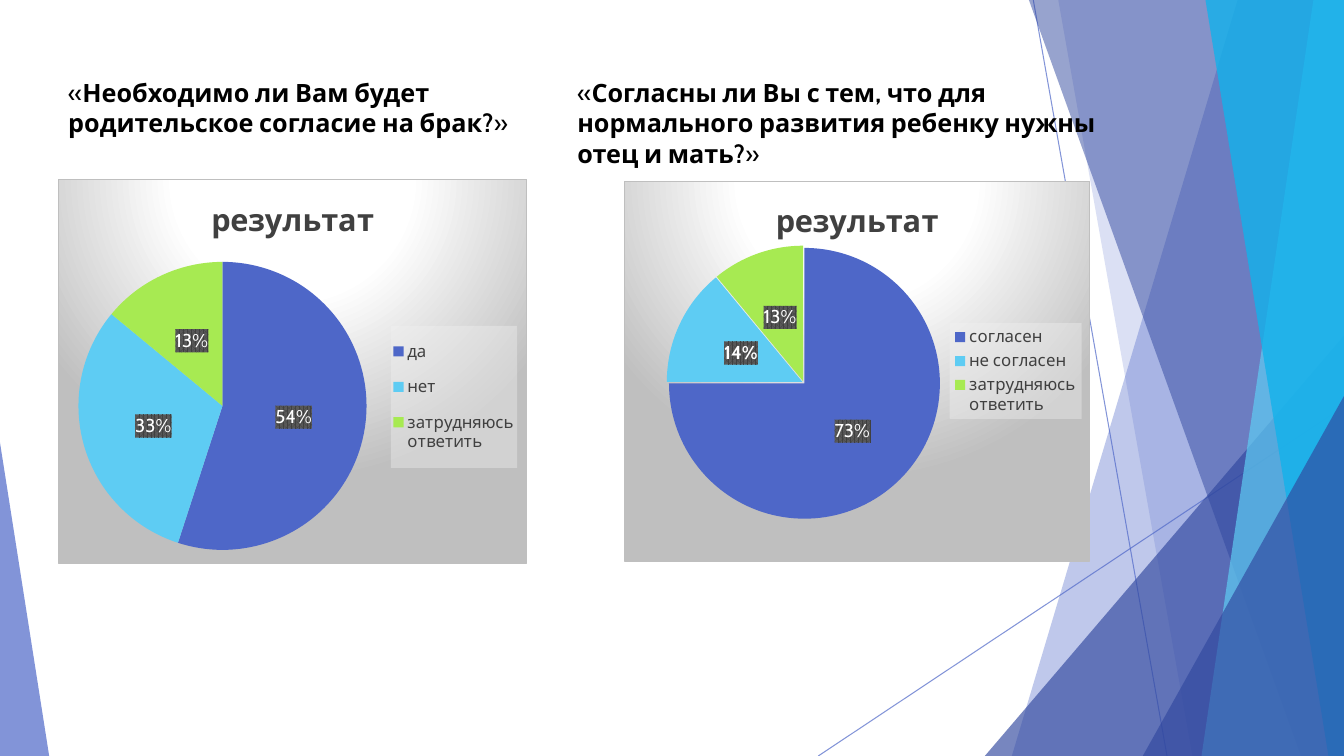
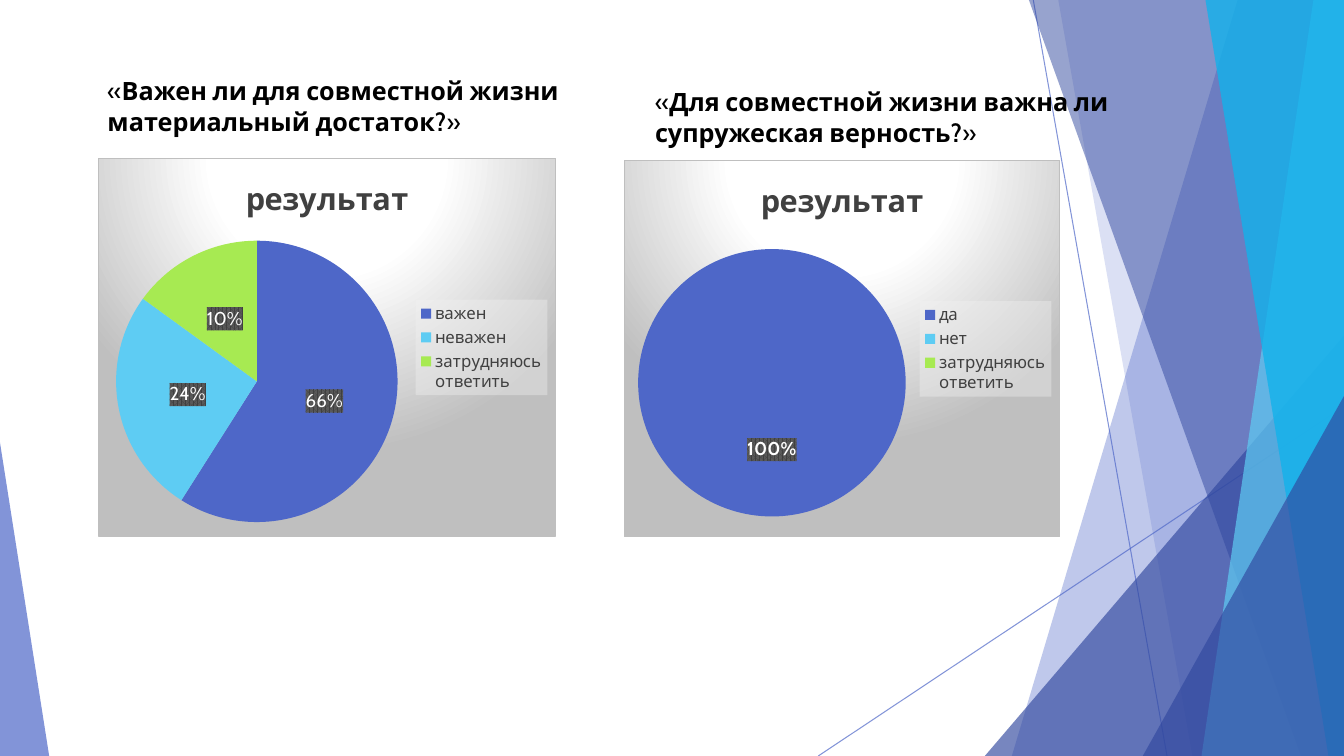
from dataclasses import dataclass

from pptx import Presentation
from pptx.chart.chart import Chart
from pptx.chart.data import CategoryChartData
from pptx.dml.color import RGBColor
from pptx.enum.chart import XL_CHART_TYPE, XL_LABEL_POSITION, XL_LEGEND_POSITION
from pptx.enum.shapes import MSO_CONNECTOR, MSO_SHAPE
from pptx.enum.text import MSO_AUTO_SIZE
from pptx.oxml import parse_xml
from pptx.oxml.ns import nsdecls, qn
from pptx.slide import Slide, SlideLayout
from pptx.text.text import Font
from pptx.util import Cm, Pt

PIE = XL_CHART_TYPE.PIE
LABEL_CENTER = XL_LABEL_POSITION.CENTER
LEGEND_RIGHT = XL_LEGEND_POSITION.RIGHT
STRAIGHT = MSO_CONNECTOR.STRAIGHT
TRIANGLE = MSO_SHAPE.ISOSCELES_TRIANGLE
GROW = MSO_AUTO_SIZE.SHAPE_TO_FIT_TEXT

COLORS = {
    "indigo": "4E67C8",
    "navy": "31489F",
    "sky": "5ECCF3",
    "azure": "12B2EB",
    "lime": "A7EA52",
    "black": "000000",
    "white": "FFFFFF",
    "silver": "BFBFBF",
    "mist": "F2F2F2",
    "charcoal": "404040",
    "slate": "595959",
}
ANSWER_COLORS = ("indigo", "sky", "lime")
FONT = "Cabin"
RESULT = "результат"
UNDECIDED = "затрудняюсь ответить"
WIDTH, HEIGHT = 33.87, 19.05

Box = tuple[float, float, float, float]


@dataclass(frozen=True)
class Ray:
    start: tuple[float, float]
    end: tuple[float, float]


@dataclass(frozen=True)
class Band:
    top_x: float
    bottom_x: float
    color: str
    opacity: int


@dataclass(frozen=True)
class Corner:
    width: float
    height: float
    color: str
    opacity: int
    on_right: bool = True


@dataclass(frozen=True)
class Poll:
    question: str
    question_box: Box
    chart_box: Box
    answers: tuple[str, str, str]
    votes: tuple[int, int, int]
    shares: dict[int, str]
    explosion: int = 0
    plot_area: Box | None = None
    legend_area: Box | None = None


BACKDROP = (
    Ray((26.04, 0), (29.41, HEIGHT)),
    Ray((WIDTH, 10.24), (20.62, HEIGHT)),
    Band(31.19, 25.5, "indigo", 36),
    Band(26.67, 30.05, "indigo", 20),
    Corner(9.05, 10.59, "navy", 66),
    Band(25.93, 32.79, "navy", 50),
    Band(33.1, 30.28, "sky", 70),
    Band(30.38, 33.48, "azure", 80),
    Corner(5.07, 9.07, "navy", 66),
    Corner(1.24, 7.9, "indigo", 70, on_right=False),
)

SLIDES = (
    (
        Poll(
            "Необходимо ли Вам будет родительское согласие на брак?",
            (1.47, 1.83, 12.45, 1.8),
            (1.47, 4.52, 11.81, 9.7),
            ("да", "нет", UNDECIDED),
            (55, 31, 14),
            {0: "54%", 1: "33%", 2: "13%"},
            legend_area=(0.71, 0.38, 0.27, 0.37),
        ),
        Poll(
            "Согласны ли Вы с тем, что для нормального развития ребенку нужны отец и мать?",
            (14.3, 1.83, 13.87, 2.57),
            (15.72, 4.55, 11.76, 9.6),
            ("согласен", "не согласен", UNDECIDED),
            (75, 14, 11),
            {0: "73%", 2: "13%"},
            explosion=1,
            plot_area=(0.07, 0.17, 0.63, 0.72),
        ),
    ),
    (
        Poll(
            "Важен ли для совместной жизни материальный достаток?",
            (2.46, 1.78, 13.26, 1.8),
            (2.46, 3.99, 11.56, 9.53),
            ("важен", "неважен", UNDECIDED),
            (59, 26, 15),
            {0: "66%", 1: "24%", 2: "10%"},
        ),
        Poll(
            "Для совместной жизни важна ли супружеская верность?",
            (16.26, 2.06, 11.94, 1.8),
            (15.72, 4.04, 11, 9.5),
            ("да", "нет", UNDECIDED),
            (100, 0, 0),
            {},
        ),
    ),
)


def rgb(name: str) -> RGBColor:
    return RGBColor.from_string(COLORS[name])


def set_font(font: Font, size: float, color: str, bold: bool) -> None:
    font.name, font.size, font.bold = FONT, Pt(size), bold
    font.color.rgb = rgb(color)


def c_xml(tag: str, content: str):
    return parse_xml(f'<c:{tag} {nsdecls("c", "a")}>{content}</c:{tag}>')


def chart_part(chart: Chart, tag: str):
    return next(chart.element.iter(qn(f"c:{tag}")))


def solid(color: str, opacity: int = 100) -> str:
    return (
        f'<a:solidFill><a:srgbClr val="{COLORS[color]}">'
        f'<a:alpha val="{opacity * 1000}"/></a:srgbClr></a:solidFill>'
    )


def set_opacity(shape, opacity: int) -> None:
    for color in shape.element.spPr.iter(qn("a:srgbClr")):
        color.append(parse_xml(f'<a:alpha {nsdecls("a")} val="{opacity * 1000}"/>'))


def draw_ray(slide: Slide, ray: Ray) -> None:
    line = slide.shapes.add_connector(STRAIGHT, *map(Cm, ray.start + ray.end))
    line.line.color.rgb = rgb("indigo")
    line.line.width = Pt(0.75)
    line.element.spPr.append(parse_xml(f'<a:effectLst {nsdecls("a")}/>'))
    set_opacity(line, 70)


def draw_facet(slide: Slide, facet: Band | Corner) -> None:
    if isinstance(facet, Band):
        outline = slide.shapes.build_freeform(Cm(facet.top_x), 0)
        corners = ((WIDTH, 0), (WIDTH, HEIGHT), (facet.bottom_x, HEIGHT))
        outline.add_line_segments([(Cm(x), Cm(y)) for x, y in corners], close=True)
        shape = outline.convert_to_shape()
    else:
        left = WIDTH - facet.width if facet.on_right else 0
        box = (left, HEIGHT - facet.height, facet.width, facet.height)
        shape = slide.shapes.add_shape(TRIANGLE, *map(Cm, box))
        shape.adjustments[0] = 1.0 if facet.on_right else 0.0
    shape.shadow.inherit = False
    shape.fill.solid()
    shape.fill.fore_color.rgb = rgb(facet.color)
    shape.line.fill.background()
    set_opacity(shape, facet.opacity)


def move_backdrop_to_layout(slide: Slide, layout: SlideLayout) -> None:
    for placeholder in list(layout.placeholders):
        layout.shapes.element.remove(placeholder.element)
    for part in BACKDROP:
        if isinstance(part, Ray):
            draw_ray(slide, part)
        else:
            draw_facet(slide, part)
    for shape in list(slide.shapes):
        layout.shapes.element.append(shape.element)


def manual_layout(area: Box, inner: bool):
    target = '<c:layoutTarget val="inner"/>' if inner else ""
    modes = "".join(f'<c:{axis}Mode val="edge"/>' for axis in "xy")
    sizes = "".join(f'<c:{key} val="{value}"/>' for key, value in zip("xywh", area))
    return c_xml("layout", f"<c:manualLayout>{target}{modes}{sizes}</c:manualLayout>")


def style_background(chart: Chart) -> None:
    stops = "".join(
        f'<a:gs pos="{position * 1000}"><a:srgbClr val="{COLORS[color]}"/></a:gs>'
        for position, color in ((0, "white"), (39, "white"), (100, "silver"))
    )
    background = c_xml(
        "spPr",
        f'<a:gradFill><a:gsLst>{stops}</a:gsLst><a:path path="circle">'
        '<a:fillToRect l="50000" t="-80000" r="50000" b="180000"/></a:path></a:gradFill>'
        f'<a:ln w="{Pt(0.75)}">{solid("silver")}</a:ln>',
    )
    chart_part(chart, "chart").addnext(background)


def style_legend(chart: Chart, area: Box | None) -> None:
    chart.has_legend = True
    chart.legend.position = LEGEND_RIGHT
    chart.legend.include_in_layout = False
    set_font(chart.legend.font, 12, "charcoal", False)
    legend = chart_part(chart, "legend")
    legend.find(qn("c:txPr")).addprevious(c_xml("spPr", solid("mist", 39)))
    if area:
        for automatic in legend.findall(qn("c:layout")):
            legend.remove(automatic)
        legend.find(qn("c:legendPos")).addnext(manual_layout(area, False))


def pattern_label(label) -> None:
    anchor = label.find(qn("c:txPr"))
    if anchor is None:
        anchor = label.find(qn("c:dLblPos"))
    for plain in label.findall(qn("c:spPr")):
        label.remove(plain)
    tones = "".join(
        f'<a:{part}><a:srgbClr val="{COLORS[color]}"/></a:{part}>'
        for part, color in (("fgClr", "charcoal"), ("bgClr", "slate"))
    )
    anchor.addprevious(c_xml("spPr", f'<a:pattFill prst="pct75">{tones}</a:pattFill>'))


def style_shares(chart: Chart, poll: Poll) -> None:
    series = chart.plots[0].series[0]
    labels = series.data_labels
    labels.show_percentage, labels.show_value = True, False
    labels.number_format, labels.number_format_is_linked = "0%", False
    labels.position = LABEL_CENTER
    set_font(labels.font, 13.3, "white", True)
    for index, share in poll.shares.items():
        label = series.points[index].data_label
        run = label.text_frame.paragraphs[0].add_run()
        run.text = share
        set_font(run.font, 13.3, "white", False)
        label.position = LABEL_CENTER
    group = chart_part(chart, "dLbls")
    for label in (group, *group.findall(qn("c:dLbl"))):
        pattern_label(label)
    empty = [index for index, votes in enumerate(poll.votes) if not votes]
    for position, index in enumerate(empty):
        group.insert(position, c_xml("dLbl", f'<c:idx val="{index}"/><c:delete val="1"/>'))


def draw_chart(slide: Slide, poll: Poll) -> None:
    data = CategoryChartData()
    data.categories = poll.answers
    data.add_series(RESULT, poll.votes)
    chart = slide.shapes.add_chart(PIE, *map(Cm, poll.chart_box), data).chart
    set_font(chart.font, 10, "black", False)
    heading = chart.chart_title.text_frame
    heading.text = RESULT
    set_font(heading.paragraphs[0].font, 22, "charcoal", True)
    style_background(chart)
    style_legend(chart, poll.legend_area)
    plot = chart.plots[0]
    plot.vary_by_categories = True
    for index, color in enumerate(ANSWER_COLORS):
        slice_fill = plot.series[0].points[index].format.fill
        slice_fill.solid()
        slice_fill.fore_color.rgb = rgb(color)
    style_shares(chart, poll)
    if poll.explosion:
        explosion = parse_xml(f'<c:explosion {nsdecls("c")} val="{poll.explosion}"/>')
        chart_part(chart, "ser").find(qn("c:tx")).addnext(explosion)
    if poll.plot_area:
        plot_area = chart_part(chart, "plotArea")
        for automatic in plot_area.findall(qn("c:layout")):
            plot_area.remove(automatic)
        plot_area.insert(0, manual_layout(poll.plot_area, True))


def draw_question(slide: Slide, poll: Poll) -> None:
    frame = slide.shapes.add_textbox(*map(Cm, poll.question_box)).text_frame
    frame.word_wrap = True
    frame.auto_size = GROW
    for text, bold in (("«", False), (poll.question, True), ("»", False)):
        run = frame.paragraphs[0].add_run()
        run.text = text
        set_font(run.font, 18, "black", bold)


def main() -> None:
    deck = Presentation()
    deck.slide_width, deck.slide_height = Cm(WIDTH), Cm(HEIGHT)
    blank = deck.slide_layouts[6]
    slides = [deck.slides.add_slide(blank) for _ in SLIDES]
    move_backdrop_to_layout(slides[0], blank)
    for slide, polls in zip(slides, SLIDES):
        for draw in (draw_chart, draw_question):
            for poll in polls:
                draw(slide, poll)
    deck.save("out.pptx")


if __name__ == "__main__":
    main()
